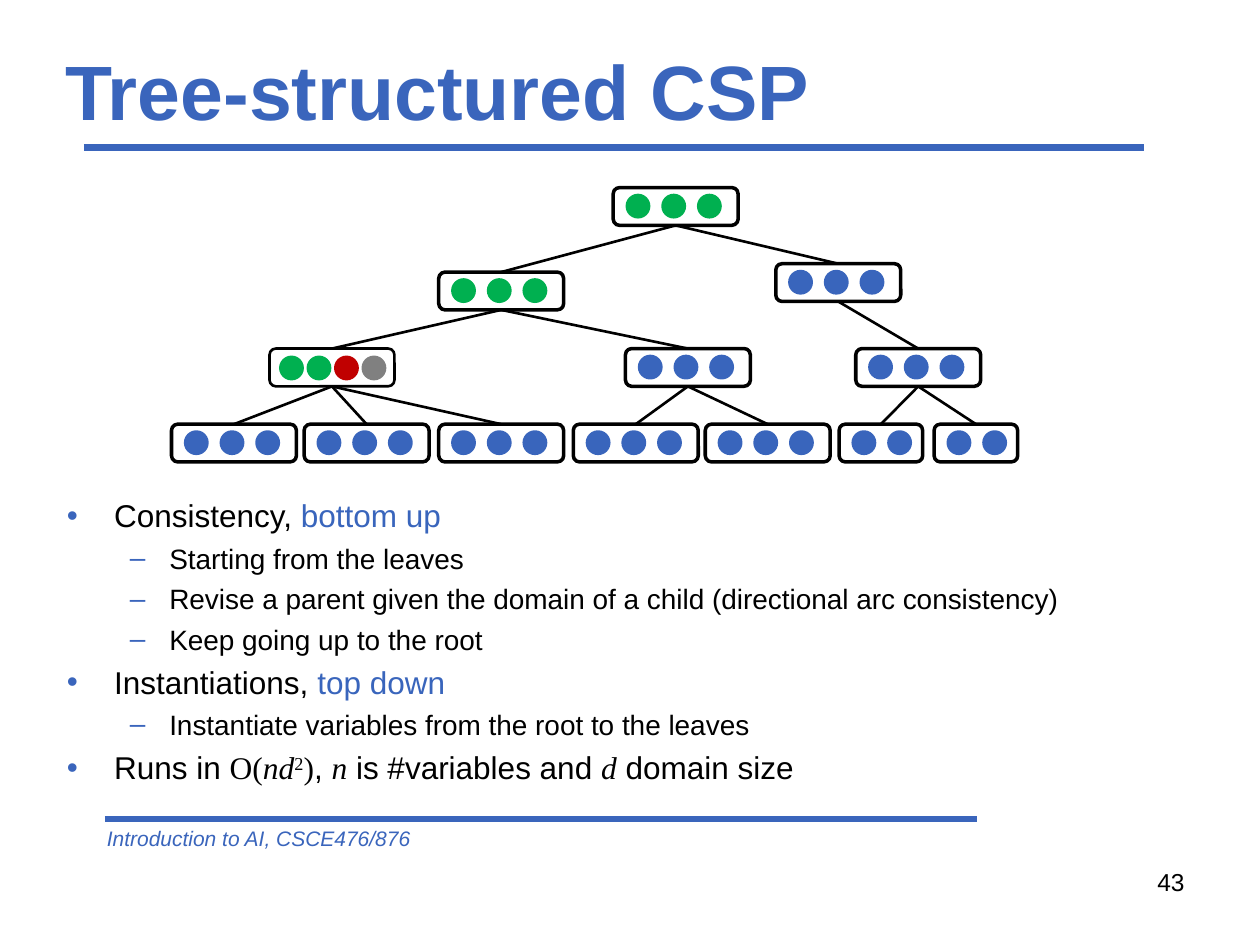
from lxml.etree import SubElement
from pptx import Presentation
from pptx.dml.color import RGBColor
from pptx.enum.shapes import MSO_CONNECTOR, MSO_SHAPE
from pptx.enum.text import MSO_ANCHOR, MSO_AUTO_SIZE, PP_ALIGN
from pptx.oxml.ns import qn
from pptx.util import Pt

COLORS = {name: RGBColor.from_string(code) for name, code in {
    "accent": "3A65BC", "blue": "3965BC", "green": "00B050",
    "red": "C00000", "gray": "808080", "black": "000000"}.items()}

prs = Presentation()
prs.slide_width, prs.slide_height = Pt(720), Pt(540)
slide = prs.slides.add_slide(prs.slide_layouts[1])


def add_line(x1, y1, x2, y2, color, width):
    line = slide.shapes.add_connector(
        MSO_CONNECTOR.STRAIGHT, Pt(x1), Pt(y1), Pt(x2), Pt(y2))
    line.line.color.rgb = COLORS[color]
    line.line.width = Pt(width)
    SubElement(line._element.spPr, qn("a:effectLst"))


def format_font(font, size, color, name="Arial", bold=False, italic=False):
    font.name, font.size = name, Pt(size)
    font.bold, font.italic = bold, italic
    font.color.rgb = COLORS[color]


# Rules, footer and page number
add_line(48, 84.2, 653.8, 84.2, "accent", 4)
add_line(60, 468, 558, 468, "accent", 4)
for text, left, top, width, height, size, color, italic, align in [
        ("Introduction to AI, CSCE476/876", 54, 468, 378, 21.6,
         12, "accent", True, PP_ALIGN.LEFT),
        ("43", 516, 492, 168, 37.4, 14, "black", False, PP_ALIGN.RIGHT)]:
    label = slide.shapes.add_textbox(Pt(left), Pt(top), Pt(width), Pt(height))
    label.text_frame.word_wrap = True
    label.text_frame.text = text
    paragraph = label.text_frame.paragraphs[0]
    paragraph.alignment = align
    format_font(paragraph.runs[0].font, size, color, italic=italic)

# Title
title = slide.shapes.title
title.left, title.top, title.width, title.height = Pt(30), Pt(24), Pt(648), Pt(54)
title.text_frame.text = "Tree-structured CSP"
title.text_frame.auto_size = MSO_AUTO_SIZE.NONE
title.text_frame.vertical_anchor = MSO_ANCHOR.MIDDLE
heading = title.text_frame.paragraphs[0]
heading.alignment = PP_ALIGN.LEFT
format_font(heading.runs[0].font, 44, "accent", bold=True)

# Tree: node -> (left, top, parent, domain values)
GREENS, BLUES = ["green"] * 3, ["blue"] * 3
LEAF_TOP, INNER_TOP = 242.4, 199.2
nodes = {
    "root": (350.4, 107.2, None, GREENS),
    "left": (250.7, 155.5, "root", GREENS),
    "right": (443.3, 150.7, "root", BLUES),
    "pruned": (154, INNER_TOP, "left", ["green", "green", "red", "gray"]),
    "middle": (357.4, INNER_TOP, "left", BLUES),
    "outer": (489, INNER_TOP, "right", BLUES),
    "leaf1": (98, LEAF_TOP, "pruned", BLUES),
    "leaf2": (173.8, LEAF_TOP, "pruned", BLUES),
    "leaf3": (250.7, LEAF_TOP, "pruned", BLUES),
    "leaf4": (327.6, LEAF_TOP, "middle", BLUES),
    "leaf5": (403, LEAF_TOP, "middle", BLUES),
    "leaf6": (479.5, LEAF_TOP, "outer", BLUES[:2]),
    "leaf7": (533.8, LEAF_TOP, "outer", BLUES[:2]),
}
NODE_HEIGHT, DOT = 21.6, 12.2
widths = {name: 47.8 if len(node[3]) == 2 else 71.4
          for name, node in nodes.items()}

# Edges from the parent's bottom centre to the child's top centre
for name, (left, top, parent, _) in nodes.items():
    if parent:
        parent_left, parent_top = nodes[parent][:2]
        add_line(parent_left + widths[parent] / 2, parent_top + NODE_HEIGHT,
                 left + widths[name] / 2, top, "black", 1.5)

# Variables with their domain values
for name, (left, top, _, domain) in nodes.items():
    crowded = len(domain) == 4
    inset, pitch, drop = (6.5, 15.7, 5) if crowded else (8.1, 20.4, 4.5)
    variable = slide.shapes.add_shape(
        MSO_SHAPE.ROUNDED_RECTANGLE,
        Pt(left), Pt(top), Pt(widths[name]), Pt(NODE_HEIGHT))
    variable.shadow.inherit = False
    variable.fill.background()
    variable.line.color.rgb = COLORS["black"]
    variable.line.width = Pt(1.5 if crowded else 2)
    for i, color in enumerate(domain):
        value = slide.shapes.add_shape(
            MSO_SHAPE.OVAL, Pt(left + inset + i * pitch), Pt(top + drop),
            Pt(DOT), Pt(DOT))
        value.shadow.inherit = False
        value.fill.solid()
        value.fill.fore_color.rgb = COLORS[color]
        value.line.color.rgb = COLORS[color]
        value.line.width = Pt(2)

# Bullets: level, then runs of (text, style)
bullets = [
    (0, [("Consistency, ", ""), ("bottom up", "blue")]),
    (1, [("Starting from the leaves", "")]),
    (1, [("Revise a parent given the domain of a child "
          "(directional arc consistency)", "")]),
    (1, [("Keep going up to the root", "")]),
    (0, [("Instantiations, ", ""), ("top down", "blue")]),
    (1, [("Instantiate variables from the root to the leaves", "")]),
    (0, [("Runs in ", ""), ("O(", "math"), ("nd", "math italic"),
         ("2", "math super"), (")", "math"), (", ", ""), ("n", "math italic"),
         (" is #variables and ", ""), ("d", "math italic"),
         (" domain size", "")]),
]
LEVELS = [("•", 27, 27, 18), ("–", 58.5, 22.5, 16)]  # mark, margin, hanging, size
body = slide.placeholders[1]
body.left, body.top, body.width, body.height = Pt(31), Pt(280), Pt(617), Pt(149)
points = body.text_frame
points.auto_size = MSO_AUTO_SIZE.NONE
points.vertical_anchor = MSO_ANCHOR.TOP
for index, (level, parts) in enumerate(bullets):
    point = points.add_paragraph() if index else points.paragraphs[0]
    mark, margin, hanging, size = LEVELS[level]
    point.level = level
    props = point._p.get_or_add_pPr()
    props.set("marL", str(Pt(margin)))
    props.set("indent", str(-Pt(hanging)))
    mark_color = SubElement(props, qn("a:buClr"))
    SubElement(mark_color, qn("a:srgbClr"), val=str(COLORS["accent"]))
    SubElement(props, qn("a:buChar"), char=mark)
    point.space_before = Pt(4 if index else 0)
    for text, style in parts:
        run = point.add_run()
        run.text = text
        format_font(run.font, size, "blue" if style == "blue" else "black",
                    "Times New Roman" if "math" in style else "Arial",
                    italic="italic" in style)
        if "super" in style:
            run._r.get_or_add_rPr().set("baseline", "30000")

prs.save("out.pptx")
